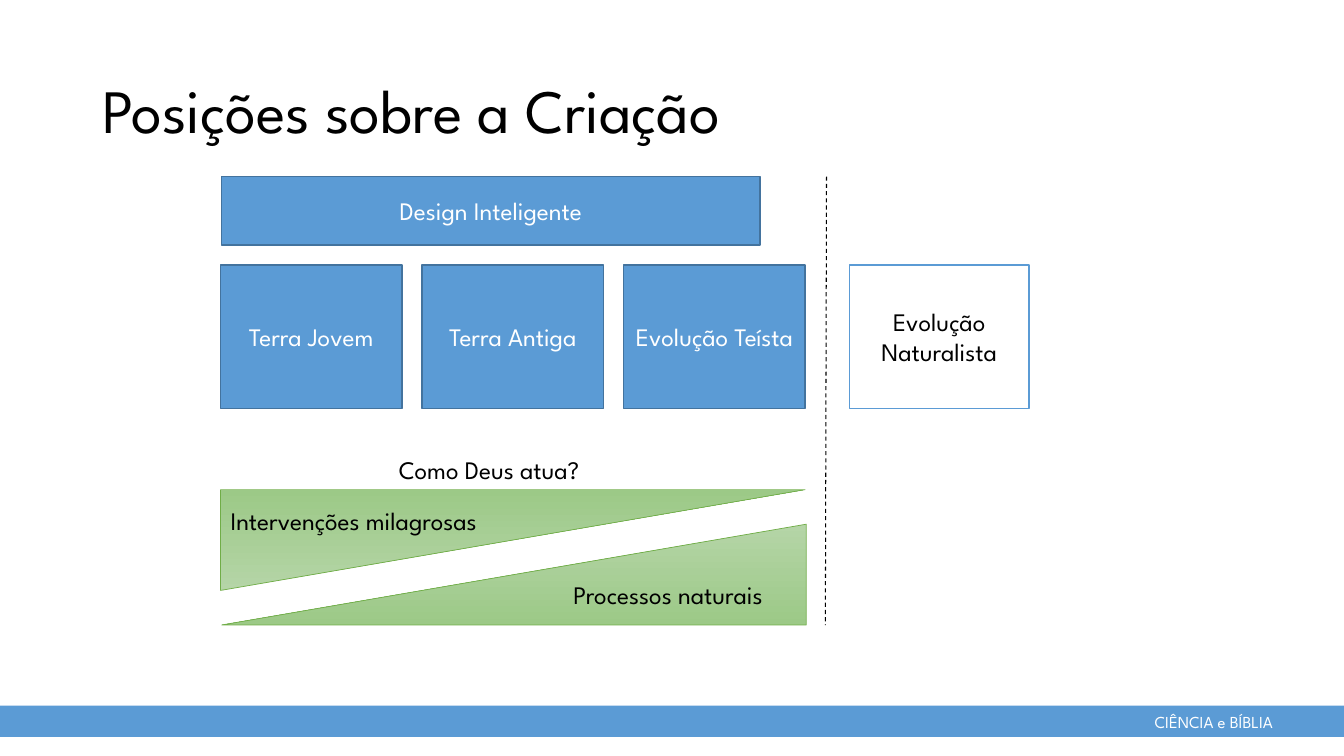
from dataclasses import dataclass

from lxml import etree
from pptx import Presentation
from pptx.dml.color import RGBColor
from pptx.enum.dml import MSO_LINE
from pptx.enum.shapes import MSO_CONNECTOR, MSO_SHAPE
from pptx.enum.text import MSO_ANCHOR, MSO_AUTO_SIZE, PP_ALIGN
from pptx.oxml.ns import qn
from pptx.util import Cm, Pt

RECTANGLE = MSO_SHAPE.RECTANGLE
RIGHT_TRIANGLE = MSO_SHAPE.RIGHT_TRIANGLE
STRAIGHT = MSO_CONNECTOR.STRAIGHT
DASH = MSO_LINE.DASH
MIDDLE, TOP = MSO_ANCHOR.MIDDLE, MSO_ANCHOR.TOP
LEFT, CENTER = PP_ALIGN.LEFT, PP_ALIGN.CENTER
FIT_SHAPE = MSO_AUTO_SIZE.SHAPE_TO_FIT_TEXT


@dataclass(frozen=True)
class Theme:
    font: str = "League Spartan"
    blue: RGBColor = RGBColor(0x5B, 0x9B, 0xD5)
    dark_blue: RGBColor = RGBColor(0x43, 0x73, 0x9E)
    light_green: RGBColor = RGBColor(0xB5, 0xD5, 0xA7)
    green: RGBColor = RGBColor(0x9C, 0xC9, 0x87)
    dark_green: RGBColor = RGBColor(0x70, 0xAD, 0x47)
    white: RGBColor = RGBColor(0xFF, 0xFF, 0xFF)
    black: RGBColor = RGBColor(0, 0, 0)
    title_size: Pt = Pt(44)
    body_size: Pt = Pt(18)
    footer_size: Pt = Pt(12)


theme = Theme()
prs = Presentation()
prs.slide_width, prs.slide_height = Cm(33.87), Cm(19.05)
slide = prs.slides.add_slide(prs.slide_layouts[6])
shapes = slide.shapes


def write(shape, text, size=theme.body_size, color=theme.black, align=LEFT,
          anchor=TOP, wrap=True, spacing=None):
    frame = shape.text_frame
    frame.word_wrap = wrap
    frame.vertical_anchor = anchor
    if not wrap:
        frame.auto_size = FIT_SHAPE
    paragraph = frame.paragraphs[0]
    paragraph.alignment = align
    paragraph.line_spacing = spacing
    run = paragraph.add_run()
    run.text = text
    run.font.name = theme.font
    run.font.size = size
    run.font.color.rgb = color


def add_box(left, top, width, height, fill, line=None):
    box = shapes.add_shape(RECTANGLE, Cm(left), Cm(top), Cm(width), Cm(height))
    box.shadow.inherit = False
    box.fill.solid()
    box.fill.fore_color.rgb = fill
    if line is None:
        box.line.fill.background()
    else:
        box.line.color.rgb = line
        box.line.width = Pt(1)
    return box


# Footer and title
add_box(0, 17.78, 33.87, 0.79, theme.blue)
footer = shapes.add_textbox(Cm(28.85), Cm(17.81), Cm(3.99), Cm(0.76))
write(footer, "CIÊNCIA e BÍBLIA", size=theme.footer_size, color=theme.white, wrap=False)
title = shapes.add_textbox(Cm(2.33), Cm(1.02), Cm(29.21), Cm(3.68))
write(title, "Posições sobre a Criação", size=theme.title_size, anchor=MIDDLE, spacing=0.9)

# Positions on creation
row_left, row_top, row_height = 5.56, 6.68, 3.61
for column, position in enumerate(["Terra Jovem", "Terra Antiga", "Evolução Teísta"]):
    theist = add_box(row_left + column * 5.08, row_top, 4.57, row_height,
                     theme.blue, theme.dark_blue)
    write(theist, position, color=theme.white, align=CENTER, anchor=MIDDLE)

naturalist = add_box(21.41, row_top, 4.52, row_height, theme.white, theme.blue)
write(naturalist, "Evolução Naturalista", align=CENTER, anchor=MIDDLE)
design = add_box(5.59, 4.45, 13.56, 1.73, theme.blue, theme.dark_blue)
write(design, "Design Inteligente", color=theme.white, align=CENTER, anchor=MIDDLE)

# Opposing wedges: miracles shrink as natural processes grow
for left, top, flip in [(5.56, 12.34, "flipV"), (5.59, 13.21, "flipH")]:
    wedge = shapes.add_shape(RIGHT_TRIANGLE, Cm(left), Cm(top), Cm(14.73), Cm(2.54))
    wedge.shadow.inherit = False
    wedge.element.spPr.find(qn("a:xfrm")).set(flip, "1")
    wedge.fill.gradient()
    wedge.fill.gradient_angle = 270
    for stop, color in zip(wedge.fill.gradient_stops, [theme.light_green, theme.green]):
        stop.color.rgb = color
    wedge.line.color.rgb = theme.dark_green
    wedge.line.width = Pt(0.5)

for left, top, width, caption in [
    (9.8, 11.33, 6.22, "Como Deus atua?"),
    (5.56, 12.6, 8, "Intervenções milagrosas"),
    (14.2, 14.48, 6.12, "Processos naturais"),
]:
    label = shapes.add_textbox(Cm(left), Cm(top), Cm(width), Cm(1.02))
    write(label, caption, wrap=False)

# Divider between theist and naturalist views
divider = shapes.add_connector(STRAIGHT, Cm(20.83), Cm(4.45), Cm(20.8), Cm(15.75))
divider.line.color.rgb = theme.black
divider.line.width = Pt(0.75)
divider.line.dash_style = DASH
etree.SubElement(divider.element.spPr, qn("a:effectLst"))

prs.save("out.pptx")
